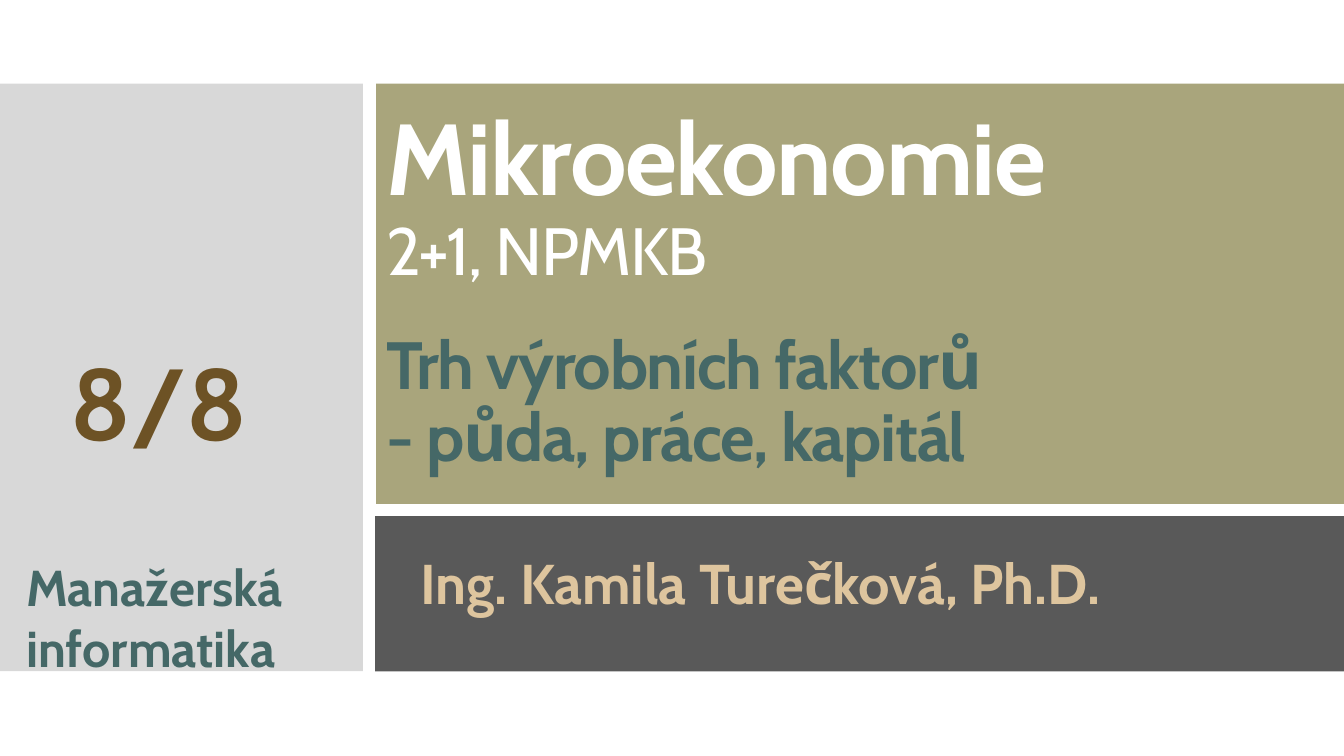
from pptx import Presentation
from pptx.dml.color import RGBColor
from pptx.enum.shapes import MSO_SHAPE
from pptx.enum.text import MSO_ANCHOR, MSO_AUTO_SIZE, PP_ALIGN
from pptx.oxml.xmlchemy import OxmlElement
from pptx.util import Inches, Pt

WHITE = RGBColor(0xFF, 0xFF, 0xFF)
GREY = RGBColor(0xC8, 0xC8, 0xC8)
OLIVE = RGBColor(0xA9, 0xA5, 0x7C)
DARK = RGBColor(0x59, 0x59, 0x59)
TEAL = RGBColor(0x45, 0x68, 0x67)
SAND = RGBColor(0xDE, 0xC5, 0x9E)
BROWN = RGBColor(0x6D, 0x52, 0x25)


class Deck:
    face = "Cabin"

    def __init__(self):
        self.file = Presentation()
        self.file.slide_width = Inches(13.33)
        self.file.slide_height = Inches(7.5)
        self.slide = self.file.slides.add_slide(self.file.slide_layouts[5])

    def panel(self, box, color, alpha=None):
        shape = self.slide.shapes.add_shape(MSO_SHAPE.RECTANGLE, *map(Inches, box))
        shape.shadow.inherit = False
        shape.line.fill.background()
        shape.fill.solid()
        shape.fill.fore_color.rgb = color
        if alpha:
            node = OxmlElement("a:alpha")
            node.set("val", str(alpha * 1000))
            shape._element.spPr.find(".//{*}srgbClr").append(node)

    def fill_text(self, frame, lines, space, anchor=MSO_ANCHOR.TOP, track=None):
        frame.word_wrap = True
        frame.auto_size = MSO_AUTO_SIZE.NONE
        frame.vertical_anchor = anchor
        for i, (text, size, color, bold, gap) in enumerate(lines):
            para = frame.add_paragraph() if i else frame.paragraphs[0]
            look = {"alignment": PP_ALIGN.LEFT, "line_spacing": space,
                    "space_before": Pt(gap)}
            for key, value in look.items():
                setattr(para, key, value)
            run = para.add_run()
            run.text = text
            look = {"name": self.face, "size": Pt(size), "bold": bold}
            for key, value in look.items():
                setattr(run.font, key, value)
            run.font.color.rgb = color
            if track:
                run._r.get_or_add_rPr().set("spc", str(track * 100))

    def title(self, box, lines):
        shape = self.slide.shapes.title
        names = ("left", "top", "width", "height")
        for key, value in zip(names, box):
            setattr(shape, key, Inches(value))
        self.slide.shapes._spTree.append(shape._element)
        self.fill_text(shape.text_frame, lines, 0.9, MSO_ANCHOR.BOTTOM, -1)

    def label(self, box, text, size, color, space):
        shape = self.slide.shapes.add_textbox(*map(Inches, box))
        self.fill_text(shape.text_frame, [(text, size, color, True, 0)], space)


def main():
    deck = Deck()
    deck.panel((0, 0.83, 3.6, 5.83), GREY, 70)
    deck.panel((3.73, 0.83, 9.6, 4.17), OLIVE)
    deck.title((3.73, 1.42, 9.6, 3.35), [
        ("Mikroekonomie", 72, WHITE, True, 0),
        ("2+1, NPMKB", 47.7, WHITE, False, 0),
        ("Trh výrobních faktorů", 47.7, TEAL, True, 30),
        ("- půda, práce, kapitál", 47.7, TEAL, True, 0),
    ])
    deck.panel((3.72, 5.12, 9.61, 1.54), DARK)
    deck.label((4.07, 5.47, 7.86, 0.84), "Ing. Kamila Turečková, Ph.D.", 40, SAND, 0.9)
    deck.label((0.6, 3.55, 2.63, 1.09), "8/8", 72, BROWN, 0.8)
    deck.label((0.16, 5.47, 3.07, 1.31), "Manažerská informatika", 36, TEAL, 1.0)
    deck.file.save("out.pptx")


if __name__ == "__main__":
    main()
